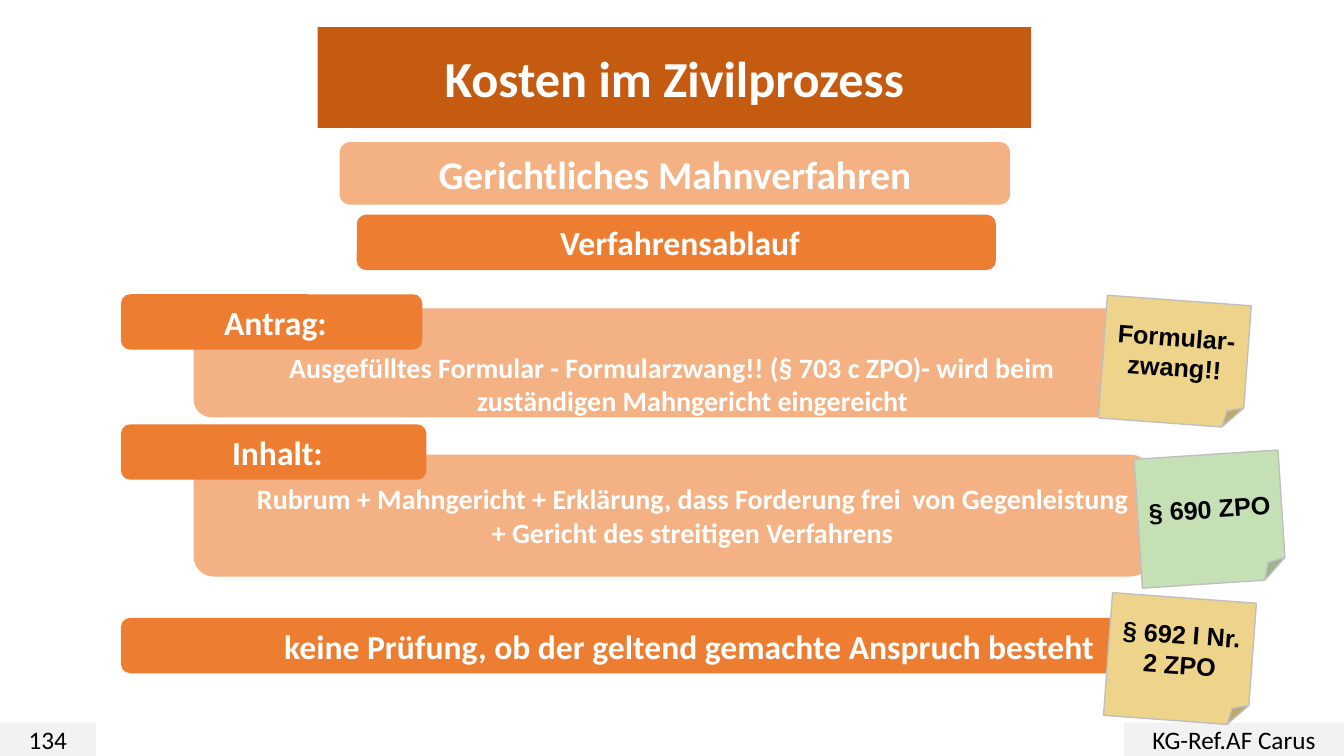
from dataclasses import dataclass

from lxml import etree
from pptx import Presentation
from pptx.dml.color import RGBColor
from pptx.enum.shapes import MSO_SHAPE
from pptx.enum.text import MSO_ANCHOR, MSO_AUTO_SIZE, PP_ALIGN
from pptx.oxml.ns import qn
from pptx.util import Inches, Pt

RECT, ROUND, NOTE = MSO_SHAPE.RECTANGLE, MSO_SHAPE.ROUNDED_RECTANGLE, MSO_SHAPE.FOLDED_CORNER
MIDDLE, TOP = MSO_ANCHOR.MIDDLE, MSO_ANCHOR.TOP
CENTER = PP_ALIGN.CENTER
NO_FIT = MSO_AUTO_SIZE.NONE


@dataclass(frozen=True)
class Theme:
    font: str = "Calibri"
    note_font: str = "Arial"
    dark: str = "C55A11"
    strong: str = "ED7D31"
    light: str = "F4B183"
    footer: str = "F2F2F2"
    yellow: str = "EED48A"
    green: str = "C5E0B4"
    edge: str = "BFBFBF"
    white: str = "FFFFFF"
    black: str = "000000"
    title_size: int = 36
    subtitle_size: int = 28
    heading_size: int = 24
    body_size: int = 20
    small_size: int = 18


class SlideBuilder:
    """Places elements at (left, top, width, height) in percent of the slide."""

    def __init__(self, prs, theme):
        self.prs, self.theme = prs, theme
        self.slide = prs.slides.add_slide(prs.slide_layouts[5])

    def box(self, area):
        sides = (self.prs.slide_width, self.prs.slide_height) * 2
        return [round(side * share / 100) for side, share in zip(sides, area)]

    def style(self, sp, text, fill, size, color, bold=True, font=None):
        sp.fill.solid()
        sp.fill.fore_color.rgb = RGBColor.from_string(fill)
        tf = sp.text_frame
        tf.word_wrap = True
        tf.auto_size = NO_FIT
        tf.vertical_anchor = MIDDLE
        tf.text = text
        p = tf.paragraphs[0]
        p.alignment = CENTER
        r = p.runs[0]
        r.font.name = font or self.theme.font
        r.font.size = Pt(size)
        r.font.bold = bold
        r.font.color.rgb = RGBColor.from_string(color)

    def shape(self, kind, area, *args, **kwargs):
        sp = self.slide.shapes.add_shape(kind, *self.box(area))
        sp.shadow.inherit = False
        sp.line.fill.background()
        self.style(sp, *args, **kwargs)
        return sp

    def title(self, area, text):
        sp = self.slide.shapes.title
        sp.left, sp.top, sp.width, sp.height = self.box(area)
        geom = etree.Element(qn("a:prstGeom"), prst="roundRect")
        etree.SubElement(geom, qn("a:avLst"))
        sp.element.spPr.insert(1, geom)
        self.style(sp, text, self.theme.dark, self.theme.title_size, self.theme.white)

    def subtitle(self, area, text):
        t = self.theme
        self.shape(ROUND, area, text, t.light, t.subtitle_size, t.white)

    def bar(self, area, text):
        t = self.theme
        self.shape(ROUND, area, text, t.strong, t.heading_size, t.white)

    def panel(self, area, text, top_inset=None):
        """Light text panel; a top inset keeps the text below its heading."""
        t = self.theme
        sp = self.shape(ROUND, area, text, t.light, t.body_size, t.white)
        tf = sp.text_frame
        tf.paragraphs[0]._p.get_or_add_pPr().set("marL", str(Inches(0.4)))
        if top_inset:
            tf.vertical_anchor = TOP
            tf.margin_top, tf.margin_bottom = Inches(top_inset), 0

    def note(self, area, text, fill, angle):
        t = self.theme
        sp = self.shape(NOTE, area, text, fill, t.small_size, t.black, font=t.note_font)
        sp.line.color.rgb = RGBColor.from_string(t.edge)
        sp.line.width = Pt(1)
        sp.rotation = angle

    def footer(self, left, width, text):
        t = self.theme
        self.shape(RECT, (left, 95.6, width, 4.4), text, t.footer, t.small_size,
                   t.black, bold=False)


def main():
    prs = Presentation()
    prs.slide_width, prs.slide_height = Inches(13.33), Inches(7.5)
    theme = Theme()
    s = SlideBuilder(prs, theme)
    bar_left, bar_height = 9, 7.33
    panel_left, panel_width = 14.4, 71.25
    note_width, note_height, tilt = 10.73, 16.27, 4.2

    s.footer(0, 7.13, "134")
    s.footer(83.63, 16.37, "KG-Ref.AF Carus")
    s.title((23.63, 3.6, 53.1, 13.33), "Kosten im Zivilprozess")
    s.subtitle((25.28, 18.8, 49.88, 8.27), "Gerichtliches Mahnverfahren")
    s.bar((26.55, 28.4, 47.55, bar_height), " Verfahrensablauf")

    s.panel((panel_left, 40.8, panel_width, 14.4),
            "Ausgefülltes Formular - Formularzwang!! (§ 703 c ZPO)- wird beim "
            "\tzuständigen Mahngericht eingereicht", top_inset=0.36)
    s.bar((bar_left, 38.93, 22.43, bar_height), " Antrag:")
    s.panel((panel_left, 60.13, panel_width, 16.13),
            "Rubrum + Mahngericht + Erklärung, dass Forderung frei "
            "\tvon Gegenleistung + Gericht des streitigen Verfahrens")
    s.bar((bar_left, 56.13, 22.73, bar_height), " Inhalt:")
    s.bar((bar_left, 81.73, 84, bar_height),
          " keine Prüfung, ob der geltend gemachte Anspruch besteht")

    s.note((82.05, 39.73, note_width, note_height), "Formular-zwang!!", theme.yellow, tilt)
    s.note((84.68, 60.13, note_width, 17.07), "§ 690 ZPO", theme.green, -3.7)
    s.note((82.43, 79.07, note_width, note_height), "§ 692 I Nr. 2 ZPO", theme.yellow, tilt)
    prs.save("out.pptx")


if __name__ == "__main__":
    main()
